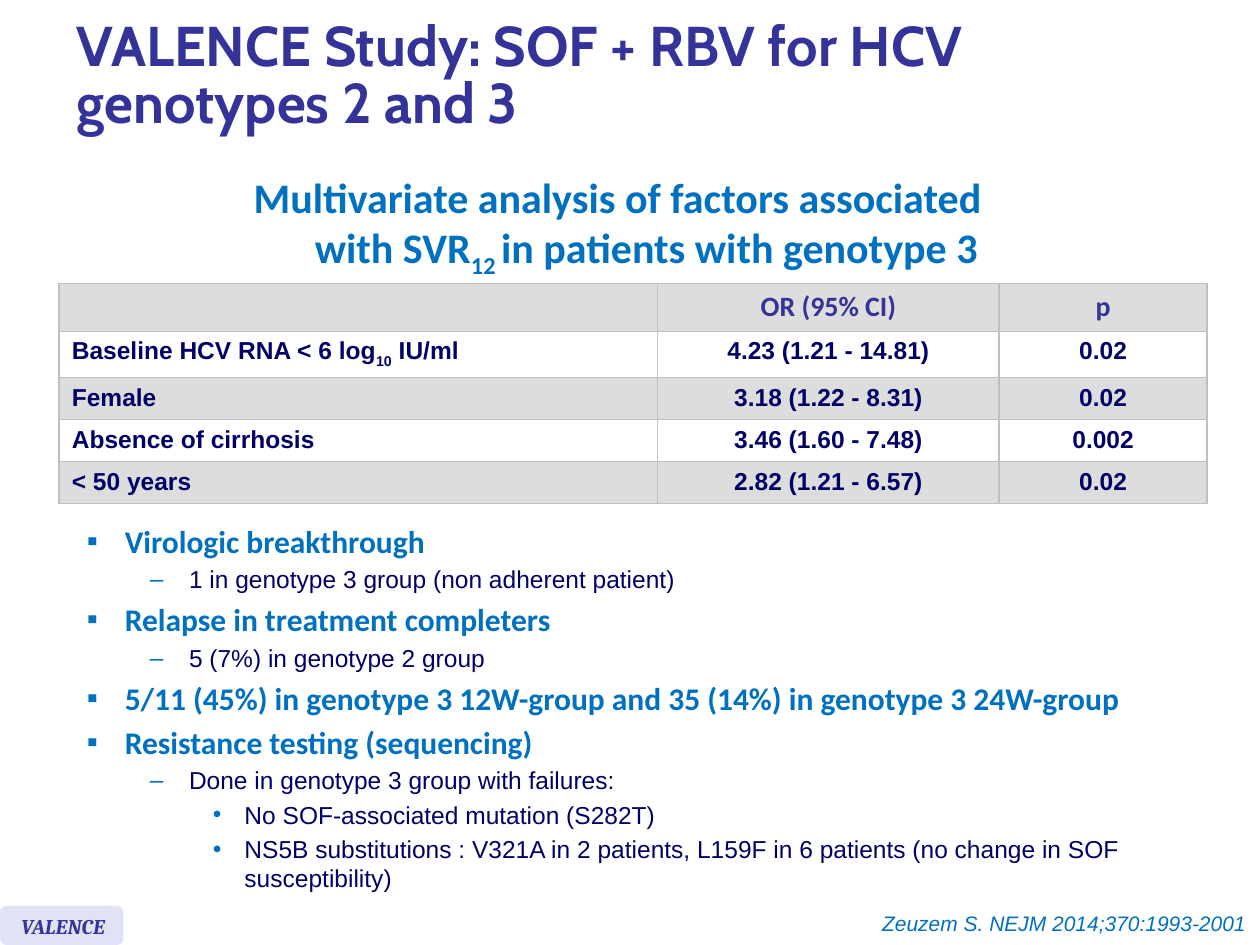
"""Builds the VALENCE study slide on factors associated with SVR12 in genotype 3."""
from dataclasses import dataclass

from lxml.etree import SubElement
from pptx import Presentation
from pptx.dml.color import RGBColor
from pptx.enum.shapes import MSO_SHAPE
from pptx.enum.text import MSO_ANCHOR, MSO_AUTO_SIZE, PP_ALIGN
from pptx.oxml import parse_xml
from pptx.oxml.ns import nsdecls, qn
from pptx.util import Inches, Pt


@dataclass(frozen=True)
class Theme:
    indigo: str = "333399"
    blue: str = "0070C0"
    navy: str = "000066"
    grey: str = "DDDDDD"
    white: str = "FFFFFF"
    border: str = "BFBFBF"
    badge: str = "E2E2F6"
    title: int = 32
    heading: int = 24
    topic: int = 18
    header: int = 16
    detail: int = 14
    note: int = 12


theme = Theme()


def style(para, name, size, color, bold=False, italic=False):
    font = para.font
    font.name, font.size, font.bold, font.italic = name, Pt(size), bold, italic
    font.color.rgb = RGBColor.from_string(color)


def add_with_subscript(para, before, subscript, after):
    para.add_run().text = before
    span = para.add_run()
    span.text = subscript
    span.font._element.set("baseline", "-25000")
    para.add_run().text = after


deck = Presentation()
deck.slide_width, deck.slide_height = Inches(10), Inches(7.5)
page = deck.slides.add_slide(deck.slide_layouts[1])

title = page.shapes.title
title.left, title.top, title.width, title.height = Inches(0.51), Inches(0.08), Inches(9.13), Inches(1.07)
title.text_frame.text = "VALENCE Study: SOF + RBV for HCV genotypes 2 and 3"
title.text_frame.auto_size = MSO_AUTO_SIZE.NONE
title.text_frame.vertical_anchor = MSO_ANCHOR.MIDDLE
para = title.text_frame.paragraphs[0]
para.alignment = PP_ALIGN.LEFT
para.line_spacing = 0.85
style(para, "Cabin", theme.title, theme.indigo, bold=True)

heading = page.shapes.add_textbox(Inches(1.3), Inches(1.31), Inches(7.28), Inches(0.49))
heading.text_frame.word_wrap = True
para = heading.text_frame.paragraphs[0]
para.alignment = PP_ALIGN.CENTER
para._p.get_or_add_pPr().set("marL", str(Inches(0.38)))
para._p.get_or_add_pPr().set("indent", str(Inches(-0.38)))
para.add_run().text = "Multivariate analysis of factors associated "
para.add_line_break()
add_with_subscript(para, "with SVR", "12 ", "in patients with genotype 3")
style(para, "Calibri", theme.heading, theme.blue, bold=True)

rows = [
    ("", "OR (95% CI)", "p"),
    (("Baseline HCV RNA < 6 log", "10", " IU/ml"), "4.23 (1.21 - 14.81)", "0.02"),
    ("Female", "3.18 (1.22 - 8.31)", "0.02"),
    ("Absence of cirrhosis", "3.46 (1.60 - 7.48)", "0.002"),
    ("< 50 years", "2.82 (1.21 - 6.57)", "0.02"),
]
column_widths = (4.75, 2.71, 1.65)
row_heights = (0.38, 0.35, 0.32, 0.32, 0.32)
table = page.shapes.add_table(
    len(rows), len(column_widths), Inches(0.47), Inches(2.25), Inches(sum(column_widths)), Inches(sum(row_heights))
).table
for column, width in zip(table.columns, column_widths):
    column.width = Inches(width)
for row_index, values in enumerate(rows):
    table.rows[row_index].height = Inches(row_heights[row_index])
    for column_index, value in enumerate(values):
        cell = table.cell(row_index, column_index)
        para = cell.text_frame.paragraphs[0]
        if isinstance(value, tuple):
            add_with_subscript(para, *value)
        elif value:
            para.add_run().text = value
        para.alignment = PP_ALIGN.CENTER if column_index else PP_ALIGN.LEFT
        if row_index == 0:
            style(para, "Calibri", theme.header, theme.indigo, bold=True)
        else:
            style(para, "Arial", theme.detail, theme.navy, bold=True)
        if not value:
            SubElement(para._p, qn("a:endParaRPr")).set("sz", str(theme.header * 100))
        properties = cell._tc.get_or_add_tcPr()
        for side in ("lnL", "lnR", "lnT", "lnB"):
            properties.append(parse_xml(
                f'<a:{side} {nsdecls("a")} w="{Pt(1)}"><a:solidFill>'
                f'<a:srgbClr val="{theme.border}"/></a:solidFill></a:{side}>'
            ))
        cell.fill.solid()
        cell.fill.fore_color.rgb = RGBColor.from_string(theme.white if row_index % 2 else theme.grey)

findings = [
    (0, "Virologic breakthrough"),
    (1, "1 in genotype 3 group (non adherent patient)"),
    (0, "Relapse in treatment completers"),
    (1, "5 (7%) in genotype 2 group"),
    (0, "5/11 (45%) in genotype 3 12W-group and 35 (14%) in genotype 3 24W-group"),
    (0, "Resistance testing (sequencing)"),
    (1, "Done in genotype 3 group with failures:"),
    (2, "No SOF-associated mutation (S282T)"),
    (2, "NS5B substitutions : V321A in 2 patients, L159F in 6 patients (no change in SOF susceptibility)"),
]
bullets = (("▪", 0.3, 0.3), ("–", 0.81, 0.31), ("•", 1.25, 0.25))
body = page.placeholders[1]
body.left, body.top, body.width, body.height = Inches(0.59), Inches(4.09), Inches(9.41), Inches(2.99)
body.text_frame.auto_size = MSO_AUTO_SIZE.NONE
for index, (level, text) in enumerate(findings):
    para = body.text_frame.add_paragraph() if index else body.text_frame.paragraphs[0]
    para.text = text
    para.level = level
    size = theme.detail if level else theme.topic
    para.space_before = Pt(0.2 * size if index else 0)
    symbol, margin, hanging = bullets[level]
    properties = para._p.get_or_add_pPr()
    properties.set("marL", str(Inches(margin)))
    properties.set("indent", str(Inches(-hanging)))
    SubElement(SubElement(properties, qn("a:buClr")), qn("a:srgbClr")).set("val", theme.blue)
    SubElement(properties, qn("a:buFont")).set("typeface", "Arial")
    SubElement(properties, qn("a:buChar")).set("char", symbol)
    if level:
        style(para, "Arial", size, theme.navy)
    else:
        style(para, "Calibri", size, theme.blue, bold=True)

badge = page.shapes.add_group_shape()
plate = badge.shapes.add_shape(MSO_SHAPE.ROUNDED_RECTANGLE, Inches(0), Inches(7.19), Inches(0.98), Inches(0.31))
plate.shadow.inherit = False
plate.fill.solid()
plate.fill.fore_color.rgb = RGBColor.from_string(theme.badge)
plate.line.fill.background()
label = badge.shapes.add_textbox(Inches(0.07), Inches(7.2), Inches(1.06), Inches(0.3))
citation = page.shapes.add_textbox(Inches(5.48), Inches(7.18), Inches(4.51), Inches(0.3))
for box, text, name, color, bold, alignment in (
    (label, "VALENCE", "Cambria", theme.indigo, True, PP_ALIGN.LEFT),
    (citation, "Zeuzem S. NEJM 2014;370:1993-2001", "Arial", theme.blue, False, PP_ALIGN.RIGHT),
):
    box.text_frame.word_wrap = True
    box.text_frame.auto_size = MSO_AUTO_SIZE.SHAPE_TO_FIT_TEXT
    para = box.text_frame.paragraphs[0]
    para.text = text
    para.alignment = alignment
    style(para, name, theme.note, color, bold=bold, italic=True)

deck.save("out.pptx")
